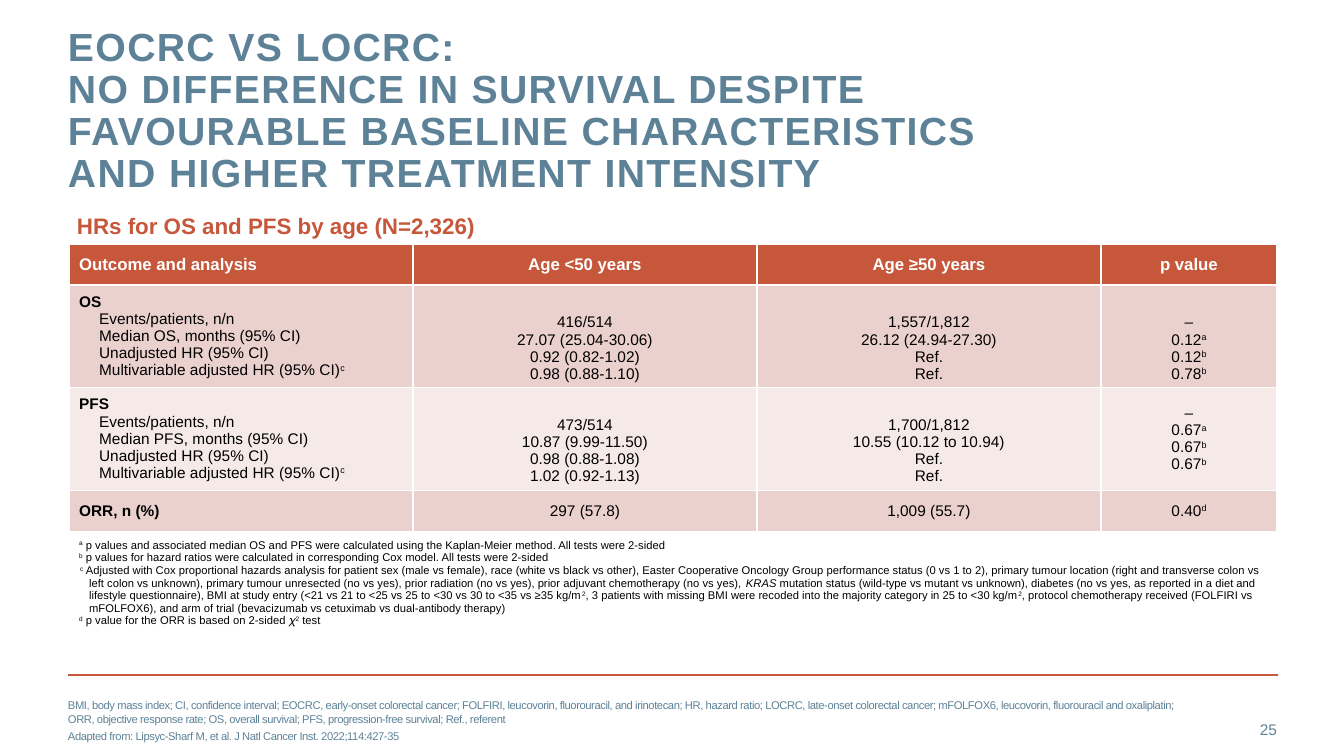
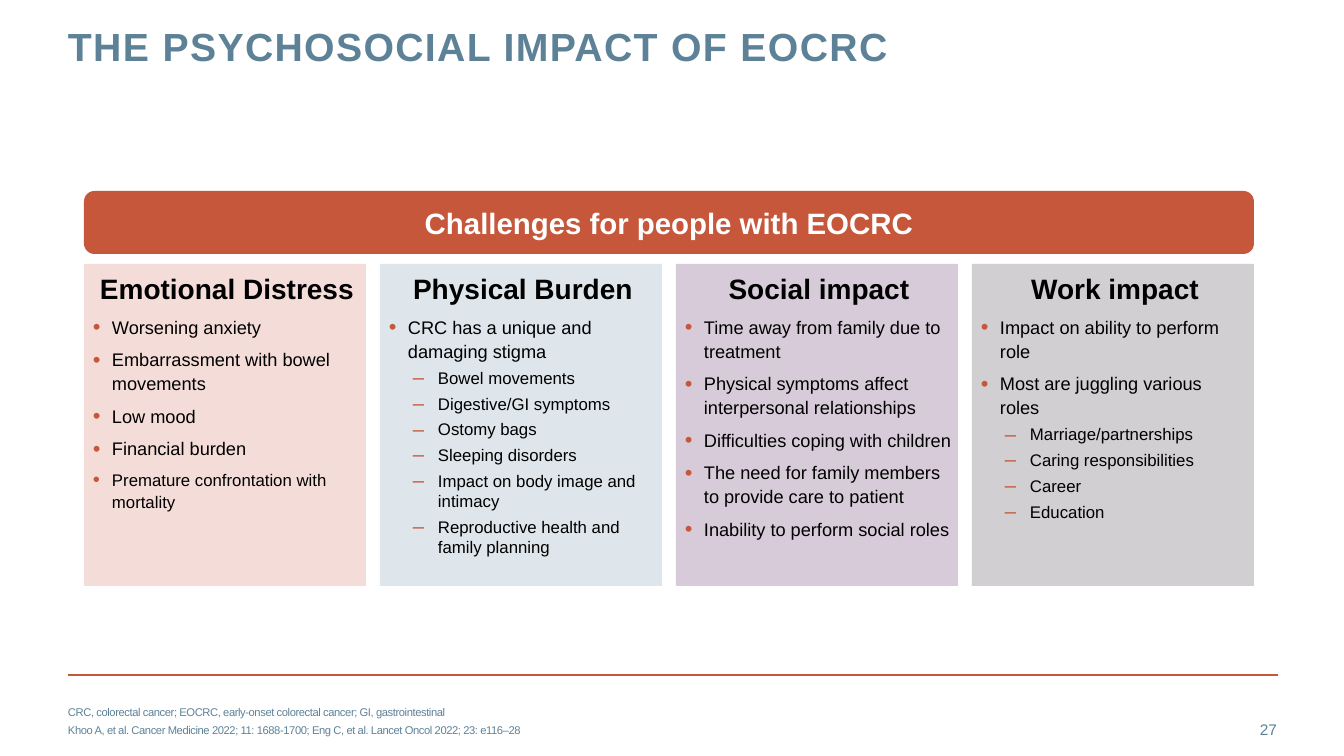
import pptx
import pptx.dml.color
import pptx.enum.shapes
import pptx.enum.text
import pptx.oxml.ns
import pptx.util
from lxml import etree

PX = 914400 / 100.8
ALIGN = pptx.enum.text.PP_ALIGN
ANCHOR = pptx.enum.text.MSO_ANCHOR
SHAPE = pptx.enum.shapes.MSO_SHAPE

FONT = "Arial"
RUST, SLATE, BLACK, WHITE = "C6573B", "5D8298", "000000", "FFFFFF"
ROW_DARK, ROW_LIGHT = "EAD1CE", "F5EAE8"

TITLE = {"size": 28, "bold": True, "color": SLATE, "tracking": 100,
         "line_spacing": pptx.util.Pt(30)}
NUMBER = {"size": 11, "color": SLATE, "alignment": ALIGN.RIGHT}
FOOTER = {"size": 8, "color": SLATE, "tracking": -30, "before": 3}
SUBTITLE = {"size": 16, "bold": True, "color": RUST}
TABLE_HEAD = {"size": 12, "bold": True, "color": WHITE}
VALUE = {"size": 11, "color": BLACK, "alignment": ALIGN.CENTER}
OUTCOME = {"size": 11, "color": BLACK, "bold": True}
MEASURE = {"size": 11, "color": BLACK, "indent": 20}
NOTE = {"size": 8, "color": BLACK}
LONG_NOTE = {**NOTE, "margin": 10, "indent": -9}
BANNER = {"size": 21, "bold": True, "color": WHITE, "alignment": ALIGN.CENTER}
CARD_HEAD = {"size": 20, "bold": True, "color": BLACK, "alignment": ALIGN.CENTER}
BULLET = {"size": 13, "color": BLACK, "bullet": "•", "margin": 20, "indent": -19,
          "before": 6, "line_spacing": 1.1}
SMALL_BULLET = {**BULLET, "size": 12}
DASH = {"size": 12, "color": BLACK, "bullet": "–", "margin": 50, "indent": -25,
        "before": 4, "level": 1}

SURVIVAL = {
    "number": "25",
    "title": "EOCRC VS LOCRC:\nNO DIFFERENCE IN SURVIVAL DESPITE FAVOURABLE BASELINE "
             "CHARACTERISTICS AND HIGHER TREATMENT INTENSITY",
    "footer": [
        "BMI, body mass index; CI, confidence interval; EOCRC, early-onset colorectal cancer; "
        "FOLFIRI, leucovorin, fluorouracil, and irinotecan; HR, hazard ratio; LOCRC, late-onset "
        "colorectal cancer; mFOLFOX6, leucovorin, fluorouracil and oxaliplatin; ORR, objective "
        "response rate; OS, overall survival; PFS, progression-free survival; Ref., referent",
        "Adapted from: Lipsyc-Sharf M, et al. J Natl Cancer Inst. 2022;114:427-35",
    ],
}
SUBTITLE_TEXT = "HRs for OS and PFS by age (N=2,326)"
COLUMN_WIDTHS = [344, 344, 344, 176]
ROW_HEIGHTS = [41, 96, 96, 41, 98]
HEADERS = ["Outcome and analysis", "Age <50 years", "Age ≥50 years", "p value"]
OUTCOMES = [
    (ROW_DARK, [
        ["OS", "Events/patients, n/n", "Median OS, months (95% CI)",
         "Unadjusted HR (95% CI)", "Multivariable adjusted HR (95% CI)^c^"],
        ["416/514", "27.07 (25.04-30.06)", "0.92 (0.82-1.02)", "0.98 (0.88-1.10)"],
        ["1,557/1,812", "26.12 (24.94-27.30)", "Ref.", "Ref."],
        ["–", "0.12^a^", "0.12^b^", "0.78^b^"]],
     [ANCHOR.MIDDLE, ANCHOR.BOTTOM, ANCHOR.BOTTOM, ANCHOR.BOTTOM]),
    (ROW_LIGHT, [
        ["PFS", "Events/patients, n/n", "Median PFS, months (95% CI)",
         "Unadjusted HR (95% CI)", "Multivariable adjusted HR (95% CI)^c^"],
        ["473/514", "10.87 (9.99-11.50)", "0.98 (0.88-1.08)", "1.02 (0.92-1.13)"],
        ["1,700/1,812", "10.55 (10.12 to 10.94)", "Ref.", "Ref."],
        ["–", "0.67^a^", "0.67^b^", "0.67^b^"]],
     [ANCHOR.MIDDLE, ANCHOR.BOTTOM, ANCHOR.BOTTOM, ANCHOR.MIDDLE]),
    (ROW_DARK, [["ORR, n (%)"], ["297 (57.8)"], ["1,009 (55.7)"], ["0.40^d^"]],
     [ANCHOR.MIDDLE] * 4),
]
NOTES = [
    ("^a^ p values and associated median OS and PFS were calculated using the Kaplan-Meier "
     "method. All tests were 2-sided", NOTE),
    ("^b^ p values for hazard ratios were calculated in corresponding Cox model. "
     "All tests were 2-sided", NOTE),
    ("^c^ Adjusted with Cox proportional hazards analysis for patient sex (male vs female), "
     "race (white vs black vs other), Easter Cooperative Oncology Group performance status "
     "(0 vs 1 to 2), primary tumour location (right and transverse colon vs left colon vs "
     "unknown), primary tumour unresected (no vs yes), prior radiation (no vs yes), prior "
     "adjuvant chemotherapy (no vs yes), *KRAS* mutation status (wild-type vs mutant vs "
     "unknown), diabetes (no vs yes, as reported in a diet and lifestyle questionnaire), BMI "
     "at study entry (<21 vs 21 to <25 vs 25 to <30 vs 30 to <35 vs ≥35 kg/m^2^, 3 patients "
     "with missing BMI were recoded into the majority category in 25 to <30 kg/m^2^, protocol "
     "chemotherapy received (FOLFIRI vs mFOLFOX6), and arm of trial (bevacizumab vs cetuximab "
     "vs dual-antibody therapy)", LONG_NOTE),
    ("^d^ p value for the ORR is based on 2-sided 𝜒^2^ test", NOTE),
]

PSYCHOSOCIAL = {
    "number": "27",
    "title": "THE PSYCHOSOCIAL IMPACT OF EOCRC",
    "footer": [
        "CRC, colorectal cancer; EOCRC, early-onset colorectal cancer; GI, gastrointestinal",
        "Khoo A, et al. Cancer Medicine 2022; 11: 1688-1700; Eng C, et al. Lancet Oncol 2022; "
        "23: e116–28",
    ],
}
BANNER_TEXT = "Challenges for people with EOCRC"
CARDS = [
    ("F4DDD8", "Emotional Distress", [
        ("Worsening anxiety", BULLET),
        ("Embarrassment with bowel movements", BULLET),
        ("Low mood", BULLET),
        ("Financial burden", BULLET),
        ("Premature confrontation with mortality", SMALL_BULLET)]),
    ("DEE6EB", "Physical Burden", [
        ("CRC has a unique and damaging stigma", BULLET),
        ("Bowel movements", DASH),
        ("Digestive/GI symptoms", DASH),
        ("Ostomy bags", DASH),
        ("Sleeping disorders", DASH),
        ("Impact on body image and intimacy", DASH),
        ("Reproductive health and family planning", DASH)]),
    ("D7CBD9", "Social impact", [
        ("Time away from family due to treatment", BULLET),
        ("Physical symptoms affect interpersonal relationships", BULLET),
        ("Difficulties coping with children", BULLET),
        ("The need for family members to provide care to patient", BULLET),
        ("Inability to perform social roles", BULLET)]),
    ("D1CFD1", "Work impact", [
        ("Impact on ability to perform role", BULLET),
        ("Most are juggling various\nroles", BULLET),
        ("Marriage/partnerships", DASH),
        ("Caring responsibilities", DASH),
        ("Career", DASH),
        ("Education", DASH)]),
]


def px(value):
    return pptx.util.Emu(round(value * PX))


def rgb(code):
    return pptx.dml.color.RGBColor.from_string(code)


def add_element(parent, tag, **attributes):
    return etree.SubElement(parent, pptx.oxml.ns.qn(tag), attributes)


def add_run(paragraph, text, style, raised, italic):
    run = paragraph.add_run()
    run.text = text
    values = {"name": FONT, "size": pptx.util.Pt(style["size"]),
              "bold": style.get("bold", False), "italic": italic}
    for name, value in values.items():
        setattr(run.font, name, value)
    run.font.color.rgb = rgb(style["color"])
    properties = run.font._element
    if "tracking" in style:
        properties.set("spc", str(style["tracking"]))
    if raised:
        properties.set("baseline", "30000")


def format_paragraph(paragraph, style, first):
    values = {"alignment": style.get("alignment", ALIGN.LEFT),
              "level": style.get("level", 0),
              "line_spacing": style.get("line_spacing"),
              "space_before": pptx.util.Pt(0 if first else style.get("before", 0))}
    for name, value in values.items():
        setattr(paragraph, name, value)
    properties = paragraph._p.get_or_add_pPr()
    properties.set("marL", str(px(style.get("margin", 0))))
    properties.set("indent", str(px(style.get("indent", 0))))
    if "bullet" in style:
        add_element(add_element(properties, "a:buClr"), "a:srgbClr", val=RUST)
        add_element(properties, "a:buSzPct", val="120000")
        add_element(properties, "a:buFont", typeface=FONT)
        add_element(properties, "a:buChar", char=style["bullet"])


def write_text(frame, items):
    for index, (text, style) in enumerate(items):
        paragraph = frame.add_paragraph() if index else frame.paragraphs[0]
        format_paragraph(paragraph, style, index == 0)
        for line_index, line in enumerate(text.split("\n")):
            if line_index:
                paragraph.add_line_break()
            for raised, part in enumerate(line.split("^")):
                for italic, piece in enumerate(part.split("*")):
                    if piece:
                        add_run(paragraph, piece, style, raised % 2 == 1, italic % 2 == 1)


def set_frame(frame, insets, anchor):
    sides = ("margin_left", "margin_top", "margin_right", "margin_bottom")
    values = {**dict(zip(sides, map(px, insets))), "word_wrap": True,
              "vertical_anchor": anchor}
    for name, value in values.items():
        setattr(frame, name, value)


def add_text(slide, box, items, insets=(0, 0, 0, 0), anchor=ANCHOR.TOP):
    frame = slide.shapes.add_textbox(*map(px, box)).text_frame
    set_frame(frame, insets, anchor)
    write_text(frame, items)


def add_panel(slide, kind, box, fill, items, insets, anchor):
    shape = slide.shapes.add_shape(kind, *map(px, box))
    shape.shadow.inherit = False
    shape.fill.solid()
    shape.fill.fore_color.rgb = rgb(fill)
    shape.line.fill.background()
    set_frame(shape.text_frame, insets, anchor)
    write_text(shape.text_frame, items)


def add_base_slide(presentation, content):
    slide = presentation.slides.add_slide(presentation.slide_layouts[6])
    rule = slide.shapes.add_connector(pptx.enum.shapes.MSO_CONNECTOR.STRAIGHT,
                                      px(68), px(675), px(1278), px(675))
    rule.line.color.rgb = rgb(RUST)
    rule.line.width = pptx.util.Pt(2)
    add_element(rule._element.spPr, "a:effectLst")
    add_text(slide, (68, 27, 964, 89), [(content["title"], TITLE)])
    add_text(slide, (1190, 709, 87, 40), [(content["number"], NUMBER)], anchor=ANCHOR.MIDDLE)
    add_text(slide, (68, 701, 1122, 40), [(text, FOOTER) for text in content["footer"]],
             anchor=ANCHOR.MIDDLE)
    return slide


def fill_cell(cell, fill, items, anchor=ANCHOR.MIDDLE):
    if fill:
        cell.fill.solid()
        cell.fill.fore_color.rgb = rgb(fill)
    else:
        cell.fill.background()
    cell.vertical_anchor = anchor
    write_text(cell.text_frame, items)


def add_survival_table(slide):
    table = slide.shapes.add_table(
        len(ROW_HEIGHTS), len(COLUMN_WIDTHS), px(69), px(244),
        px(sum(COLUMN_WIDTHS)), px(sum(ROW_HEIGHTS))).table
    table.horz_banding = False
    for column, width in zip(table.columns, COLUMN_WIDTHS):
        column.width = px(width)
    for row, height in zip(table.rows, ROW_HEIGHTS):
        row.height = px(height)
    for index, header in enumerate(HEADERS):
        style = {**TABLE_HEAD, "alignment": ALIGN.CENTER if index else ALIGN.LEFT}
        fill_cell(table.cell(0, index), RUST, [(header, style)])
    for row_index, (fill, columns, anchors) in enumerate(OUTCOMES, 1):
        for index, (lines, anchor) in enumerate(zip(columns, anchors)):
            styles = [VALUE] * len(lines) if index else [OUTCOME] + [MEASURE] * (len(lines) - 1)
            fill_cell(table.cell(row_index, index), fill, list(zip(lines, styles)), anchor)
    last = len(ROW_HEIGHTS) - 1
    notes_cell = table.cell(last, 0)
    notes_cell.merge(table.cell(last, len(COLUMN_WIDTHS) - 1))
    fill_cell(notes_cell, None, NOTES)


def build_survival(presentation):
    slide = add_base_slide(presentation, SURVIVAL)
    add_text(slide, (67, 207, 1210, 78), [(SUBTITLE_TEXT, SUBTITLE)], (10, 5, 10, 5))
    add_survival_table(slide)


def build_psychosocial(presentation):
    slide = add_base_slide(presentation, PSYCHOSOCIAL)
    left, width, gap = 84, 1170, 14
    card_width = (width - gap * (len(CARDS) - 1)) / len(CARDS)
    add_panel(slide, SHAPE.ROUNDED_RECTANGLE, (left, 191, width, 63), RUST,
              [(BANNER_TEXT, BANNER)], (10, 5, 10, 5), ANCHOR.MIDDLE)
    for index, (fill, heading, points) in enumerate(CARDS):
        box = (left + index * (card_width + gap), 264, card_width, 322)
        add_panel(slide, SHAPE.RECTANGLE, box, fill, [(heading, CARD_HEAD)] + points,
                  (8, 8, 4, 4), ANCHOR.TOP)


def main():
    presentation = pptx.Presentation()
    presentation.slide_width, presentation.slide_height = px(1344), px(756)
    build_survival(presentation)
    build_psychosocial(presentation)
    presentation.save("out.pptx")


if __name__ == "__main__":
    main()
